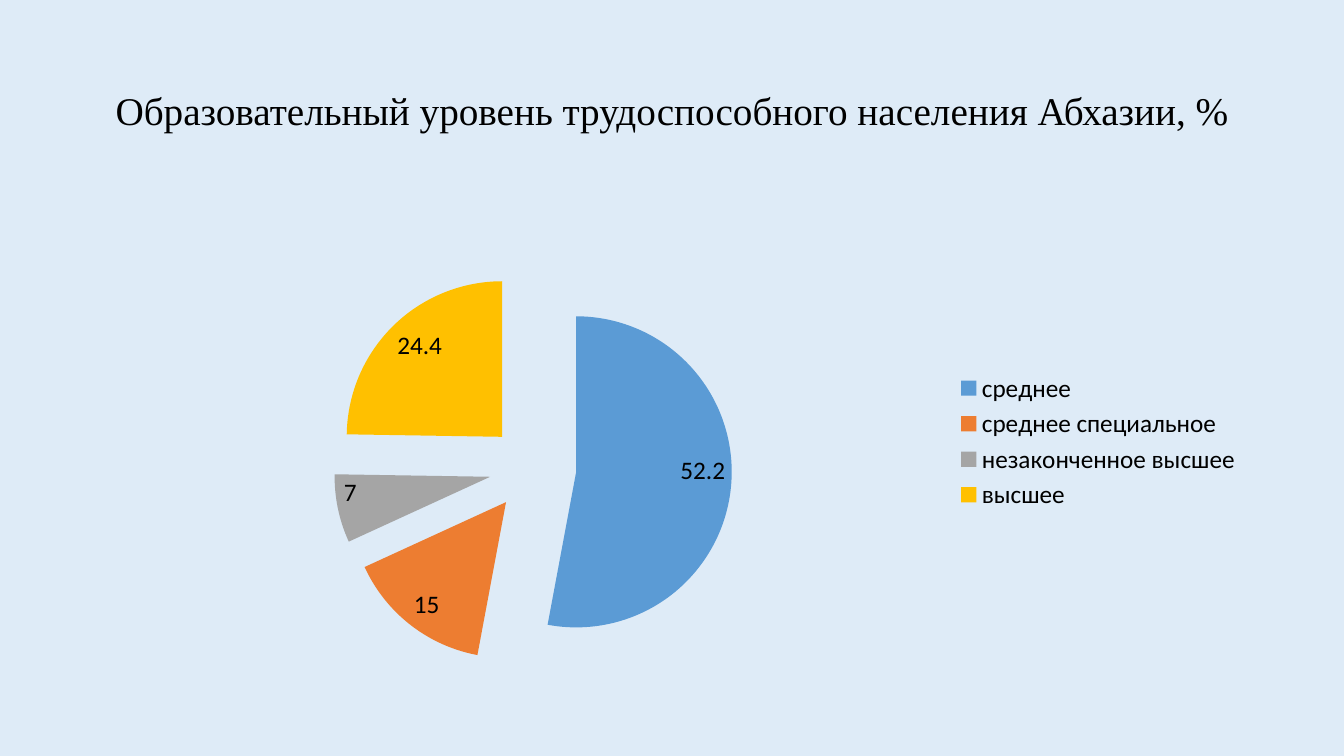
from dataclasses import dataclass
from typing import NamedTuple

from lxml.etree import SubElement
from pptx import Presentation
from pptx.chart.data import CategoryChartData as Data
from pptx.dml.color import RGBColor as Rgb
from pptx.enum.chart import XL_CHART_TYPE as Kind
from pptx.enum.chart import XL_LABEL_POSITION as Spot
from pptx.enum.chart import XL_LEGEND_POSITION as Side
from pptx.enum.text import MSO_ANCHOR as Anchor
from pptx.enum.text import PP_ALIGN as Align
from pptx.oxml.ns import qn
from pptx.slide import Slide
from pptx.util import Emu, Pt

SCALE = 9525


@dataclass(frozen=True)
class Theme:
    back: str = "DEEBF7"
    ink: str = "000000"
    head_font: str = "Times New Roman"
    body_font: str = "Calibri"
    head_size: int = 28
    body_size: int = 18


class Box(NamedTuple):
    left: int
    top: int
    width: int
    height: int

    def emu(self) -> list[Emu]:
        return [px(side) for side in self]


class Slice(NamedTuple):
    label: str
    value: float
    color: str


THEME = Theme()
TITLE = "Образовательный уровень трудоспособного населения Абхазии, %"
TITLE_BOX = Box(88, 38, 1104, 139)
PIE_BOX = Box(88, 192, 1104, 457)
PLOT = {"x": 0.02, "y": 0.14, "w": 0.72, "h": 0.83}
BURST = 28
LEVELS = [
    Slice("среднее", 52.2, "5B9BD5"),
    Slice("среднее специальное", 15, "ED7D31"),
    Slice("незаконченное высшее", 7, "A5A5A5"),
    Slice("высшее", 24.4, "FFC000"),
]


def px(count: int) -> Emu:
    return Emu(count * SCALE)


def paint(fill, color: str) -> None:
    fill.solid()
    fill.fore_color.rgb = Rgb.from_string(color)


def style(font, name: str, size: int) -> None:
    font.name = name
    font.size = Pt(size)
    font.color.rgb = Rgb.from_string(THEME.ink)


def add_title(slide: Slide, box: Box, text: str) -> None:
    frame = slide.shapes.add_textbox(*box.emu()).text_frame
    frame.word_wrap = True
    frame.vertical_anchor = Anchor.MIDDLE
    frame.text = text
    para = frame.paragraphs[0]
    para.alignment = Align.CENTER
    para.line_spacing = 0.9
    style(para.runs[0].font, THEME.head_font, THEME.head_size)


def set_plot(chart, rect: dict[str, float]) -> None:
    area = chart.plots[0]._element.getparent()
    for old in area.findall(qn("c:layout")):
        area.remove(old)
    layout = SubElement(area, qn("c:layout"))
    area.insert(0, layout)
    manual = SubElement(layout, qn("c:manualLayout"))
    rules = {"layoutTarget": "inner", "xMode": "edge", "yMode": "edge", **rect}
    for tag, val in rules.items():
        SubElement(manual, qn(f"c:{tag}")).set("val", str(val))


def add_pie(slide: Slide, box: Box, slices: list[Slice]) -> None:
    data = Data()
    data.categories = [part.label for part in slices]
    data.add_series("Series 1", [part.value for part in slices])
    chart = slide.shapes.add_chart(Kind.PIE_EXPLODED, *box.emu(), data).chart
    style(chart.font, THEME.body_font, THEME.body_size)
    chart.has_title = False
    chart.has_legend = True
    chart.legend.position = Side.RIGHT
    chart.legend.include_in_layout = False
    set_plot(chart, PLOT)

    plot = chart.plots[0]
    plot.vary_by_categories = True
    series = plot.series[0]
    for burst in series._element.iter(qn("c:explosion")):
        burst.set("val", str(BURST))
    for index, part in enumerate(slices):
        paint(series.points[index].format.fill, part.color)
    plot.has_data_labels = True
    labels = plot.data_labels
    labels.show_value = True
    labels.show_percentage = False
    labels.position = Spot.INSIDE_END
    style(labels.font, THEME.body_font, THEME.body_size)


def main() -> None:
    deck = Presentation()
    deck.slide_width, deck.slide_height = px(1280), px(720)
    slide = deck.slides.add_slide(deck.slide_layouts[6])
    paint(slide.background.fill, THEME.back)
    add_title(slide, TITLE_BOX, TITLE)
    add_pie(slide, PIE_BOX, LEVELS)
    deck.save("out.pptx")


if __name__ == "__main__":
    main()
